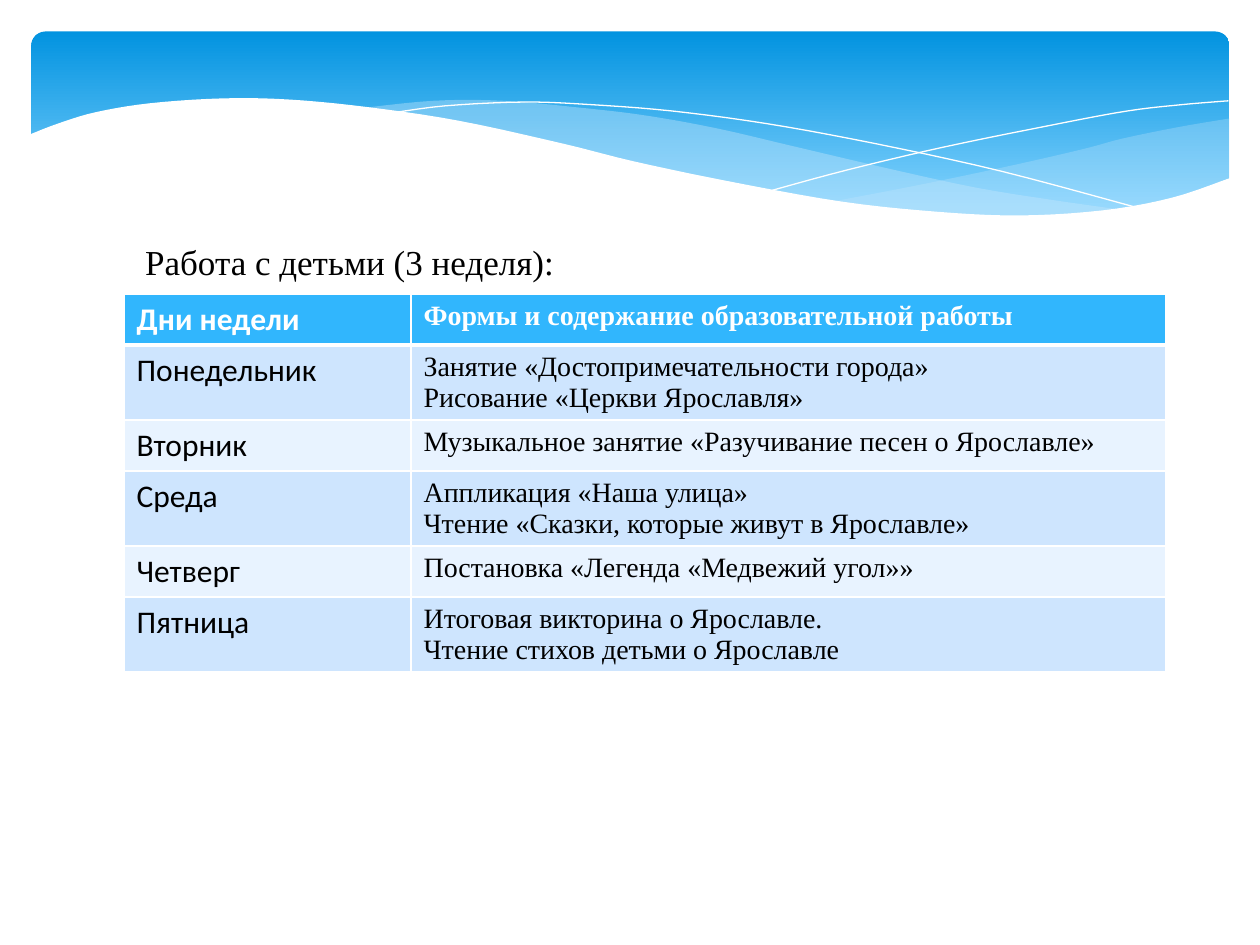
"""Builds a slide with a wave banner and a weekly plan of work with children."""
from lxml import etree
from pptx import Presentation
from pptx.dml.color import RGBColor
from pptx.enum import shapes, text
from pptx.oxml import ns
from pptx.util import Pt

WHITE = RGBColor(0xFF, 0xFF, 0xFF)
BLACK = RGBColor(0x00, 0x00, 0x00)
SKY_DARK = RGBColor(0x02, 0x93, 0xE0)
SKY_LIGHT = RGBColor(0x83, 0xD3, 0xFE)
MIST = RGBColor(0xC6, 0xE7, 0xFC)
HEADER = RGBColor(0x31, 0xB6, 0xFD)
BANDS = [RGBColor(0xE8, 0xF3, 0xFF), RGBColor(0xCE, 0xE5, 0xFE)]


def smooth(knots, steps=5):
    padded = [knots[0], *knots, knots[-1]]
    points = [knots[0]]
    for a, b, c, d in zip(padded, padded[1:], padded[2:], padded[3:]):
        for i in range(1, steps + 1):
            t = i / steps
            points.append(tuple(
                0.5 * (2 * q + (r - p) * t + (2 * p - 5 * q + 4 * r - s) * t ** 2
                       + (3 * q - p - 3 * r + s) * t ** 3)
                for p, q, r, s in zip(a, b, c, d)))
    return points


def add_wave(points, color, opacity=None, closed=True):
    emu = [(Pt(x), Pt(y)) for x, y in points]
    builder = s.shapes.build_freeform(*emu[0])
    builder.add_line_segments(emu[1:], close=closed)
    sp = builder.convert_to_shape()
    sp.shadow.inherit = False
    if closed:
        sp.fill.solid()
        sp.fill.fore_color.rgb = color
        sp.line.fill.background()
    else:
        sp.fill.background()
        sp.line.color.rgb = color
        sp.line.width = Pt(0)
    if opacity:
        clr = sp.fill._xPr.find(".//" + ns.qn("a:srgbClr"))
        etree.SubElement(clr, ns.qn("a:alpha")).set("val", str(opacity * 1000))


prs = Presentation()
prs.slide_width, prs.slide_height = Pt(720), Pt(540)
s = prs.slides.add_slide(prs.slide_layouts[6])

banner = s.shapes.add_shape(shapes.MSO_SHAPE.ROUNDED_RECTANGLE,
                            Pt(18), Pt(18), Pt(684.5), Pt(112.3))
banner.adjustments[0] = 0.071
banner.shadow.inherit = False
banner.line.fill.background()
banner.fill.gradient()
banner.fill.gradient_angle = 270
for stop, color, position in zip(banner.fill.gradient_stops, (SKY_DARK, SKY_LIGHT), (0, 0.9)):
    stop.color.rgb = color
    stop.position = position

right_top = [(702.7, 67.7), (673.2, 72.7), (641.5, 79.2), (619.9, 85), (579.6, 94.3),
             (524.9, 105.8), (475.9, 115.2)]
right_bottom = [(475.9, 115.2), (507.6, 118.8), (545, 122.4), (578.2, 123.8), (607.7, 123.1),
                (634.3, 120.2), (663.1, 115.2), (683.3, 109.4), (702.7, 101.5)]
middle_top = [(643, 120.2), (602.6, 114.5), (558, 107.3), (508.3, 96.5), (452.9, 83.5),
              (409.7, 73.4), (370.1, 66.2), (334.8, 61.9), (287.3, 57.6), (247.7, 57.6),
              (205.9, 61.9)]
middle_bottom = [(205.9, 61.9), (246.2, 67.7), (290.9, 76.3), (323.3, 83.5), (381.6, 97.2),
                 (432.7, 108), (478.8, 115.9), (519.8, 121), (556.6, 123.8), (589, 124.6),
                 (617, 123.1), (643, 120.2)]
falling_line = [(222.5, 64.8), (254.2, 60.5), (299.5, 58.3), (337.7, 59.8), (383.8, 63.4),
                (437.8, 70.6), (500.4, 82.1), (572.4, 97.9), (653, 119.5)]
rising_line = [(441.4, 108.7), (483.8, 97.2), (538.6, 84.2), (601.9, 71.3), (644.4, 63.4),
               (675.4, 59.8), (702, 57.6)]
front_top = [(703.4, 101.5), (669.6, 113), (630, 120.2), (582.5, 123.1), (535.7, 121),
             (481, 115.2), (416.9, 103.7), (362.2, 92.2), (321.8, 82.1), (262.8, 69.1),
             (210.2, 61.2), (165.6, 56.9), (127.4, 56.2), (85.7, 59), (54.7, 64.1),
             (33.1, 70.6), (16.6, 77)]

add_wave(smooth(right_top) + smooth(right_bottom), MIST, 29)
add_wave(smooth(middle_top) + smooth(middle_bottom), MIST, 40)
add_wave(smooth(falling_line), WHITE, closed=False)
add_wave(smooth(rising_line), WHITE, closed=False)
add_wave(smooth(front_top) + [(16.6, 161.3), (703.4, 161.3)], WHITE)

plan = [
    ("Дни недели", ["Формы и содержание образовательной работы"]),
    ("Понедельник", ["Занятие «Достопримечательности города»", "Рисование «Церкви Ярославля»"]),
    ("Вторник", ["Музыкальное занятие «Разучивание песен о Ярославле»"]),
    ("Среда", ["Аппликация «Наша улица»", "Чтение «Сказки, которые живут в Ярославле»"]),
    ("Четверг", ["Постановка «Легенда «Медвежий угол»»"]),
    ("Пятница", ["Итоговая викторина о Ярославле.", "Чтение стихов детьми о Ярославле"]),
]
table = s.shapes.add_table(len(plan), 2, Pt(70.9), Pt(168), Pt(595), Pt(214)).table
table.columns[0].width, table.columns[1].width = Pt(164), Pt(431)
for i, (day, activities) in enumerate(plan):
    table.rows[i].height = Pt(29.2 if len(activities) == 1 else 42.6)
    for j, (lines, font, size) in enumerate([([day], "Calibri", 18),
                                             (activities, "Times New Roman", 16)]):
        cell = table.cell(i, j)
        cell.fill.solid()
        cell.fill.fore_color.rgb = BANDS[i % 2] if i else HEADER
        tcPr = cell._tc.get_or_add_tcPr()
        for k, side in enumerate(("lnL", "lnR", "lnT", "lnB")):
            heavy = (i, side) in ((0, "lnB"), (1, "lnT"))
            ln = etree.Element(ns.qn("a:" + side), w=str(Pt(3 if heavy else 1)))
            solid = etree.SubElement(ln, ns.qn("a:solidFill"))
            etree.SubElement(solid, ns.qn("a:srgbClr")).set("val", str(WHITE))
            tcPr.insert(k, ln)
        tf = cell.text_frame
        for n, line in enumerate(lines):
            p = tf.add_paragraph() if n else tf.paragraphs[0]
            r = p.add_run()
            r.text = line
            r.font.name, r.font.size, r.font.bold = font, Pt(size), i == 0
            r.font.color.rgb = BLACK if i else WHITE

heading = s.shapes.add_textbox(Pt(70.9), Pt(133.9), Pt(453.6), Pt(31.5))
tf = heading.text_frame
tf.word_wrap = True
tf.auto_size = text.MSO_AUTO_SIZE.SHAPE_TO_FIT_TEXT
p = tf.paragraphs[0]
p._p.get_or_add_pPr().set("marL", str(Pt(5)))
r = p.add_run()
r.text = "Работа с детьми (3 неделя):"
r.font.name, r.font.size = "Times New Roman", Pt(20)
r.font.color.rgb = BLACK

prs.save("out.pptx")
